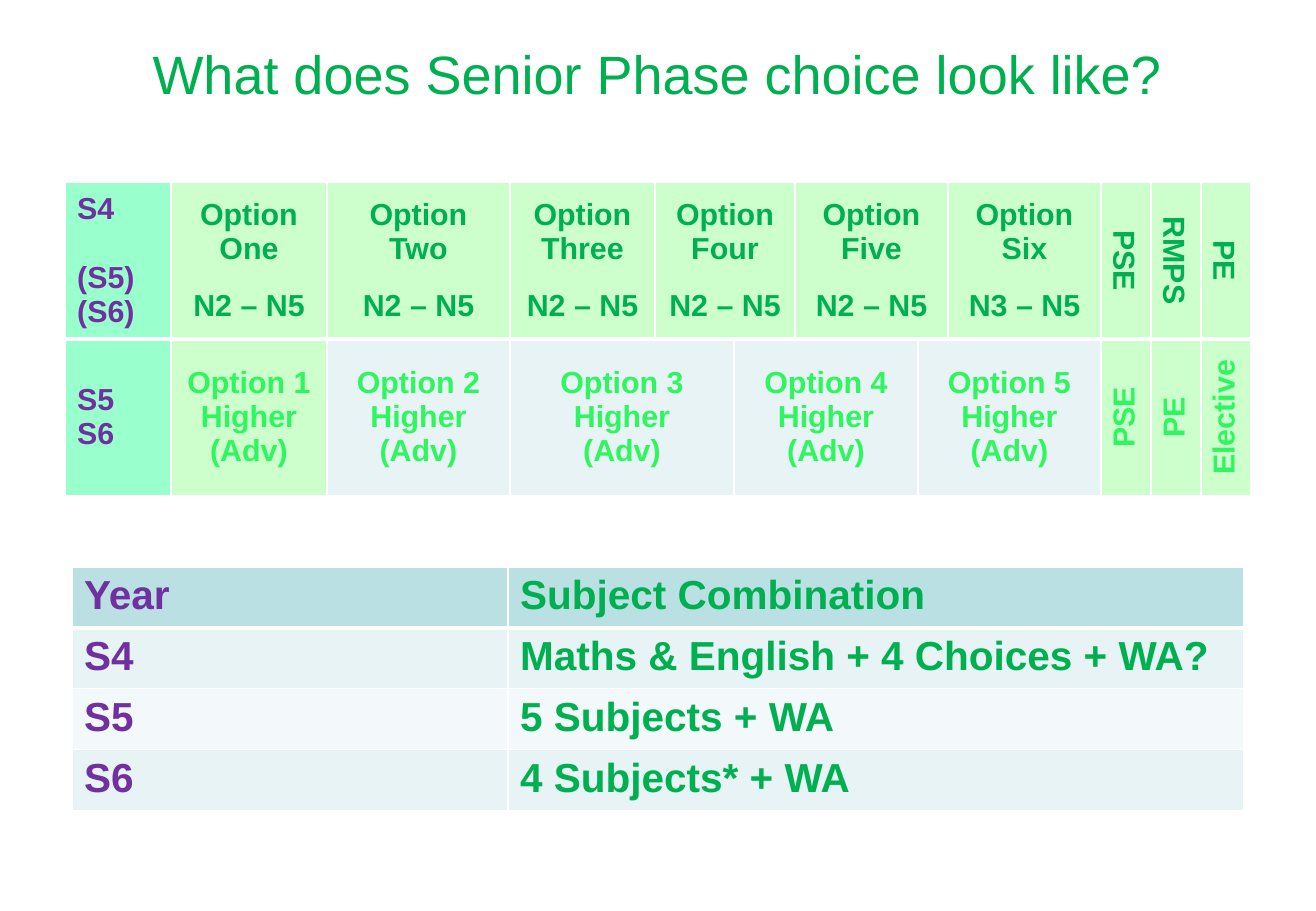
from lxml import etree
from pptx import Presentation, util as u
from pptx.dml.color import RGBColor
from pptx.enum import text
from pptx.oxml import ns

PX = 914400 / 121.5
COLOURS = {
    "white": "FFFFFF", "purple": "7030A0", "green": "00B050", "bright": "2EF65E",
    "mint": "99FFCC", "lime": "CCFFCC", "header": "BBE0E3", "band": "E7F3F4", "pale": "F3F9FA",
}
LEFT, CENTRE = text.PP_ALIGN.LEFT, text.PP_ALIGN.CENTER


def add_grid(left, top, widths, height, rows):
    """Add a plain table with equal rows; lengths in px."""
    frame = page.shapes.add_table(
        rows, len(widths), *(u.Emu(round(n * PX)) for n in (left, top, sum(widths), rows * height)))
    table = frame.table
    table.first_row = table.horz_banding = False
    for column, width in zip(table.columns, widths):
        column.width = u.Emu(round(width * PX))
    for row in table.rows:
        row.height = u.Emu(round(height * PX))
    return table


def fill_cell(table, row, column, lines, fill, colour, size, align=LEFT,
              anchor=text.MSO_ANCHOR.MIDDLE, vert=None, gap=None):
    """Write and format a cell; gap is (line index, points of space before it)."""
    cell = table.cell(row, column)
    props = cell._tc.get_or_add_tcPr()
    if vert:
        props.set("vert", vert)
    for side in "LRTB":
        heavy = (row, side) in ((0, "B"), (1, "T"))
        line = etree.SubElement(props, ns.qn(f"a:ln{side}"), w=str(u.Pt(3 if heavy else 1)))
        solid = etree.SubElement(line, ns.qn("a:solidFill"))
        etree.SubElement(solid, ns.qn("a:srgbClr"), val=COLOURS["white"])
    cell.fill.solid()
    cell.fill.fore_color.rgb = RGBColor.from_string(COLOURS[fill])
    cell.vertical_anchor = anchor
    for index, words in enumerate(lines):
        box = cell.text_frame
        para = box.paragraphs[0] if index == 0 else box.add_paragraph()
        para.alignment = align
        if gap and gap[0] == index:
            para.space_before = u.Pt(gap[1])
        span = para.add_run()
        span.text = words
        for name, value in {"name": "Arial", "size": u.Pt(size), "bold": True}.items():
            setattr(span.font, name, value)
        span.font.color.rgb = RGBColor.from_string(COLOURS[colour])


deck = Presentation()
deck.slide_width, deck.slide_height = u.Inches(10.83), u.Inches(7.5)
page = deck.slides.add_slide(deck.slide_layouts[5])

title = page.shapes.title
for name, length in {"left": 134, "top": 34, "width": 1047, "height": 78}.items():
    setattr(title, name, u.Emu(round(length * PX)))
title.text_frame.text = "What does Senior Phase choice look like?"
title.text_frame.auto_size = text.MSO_AUTO_SIZE.NONE
title.text_frame.vertical_anchor = text.MSO_ANCHOR.MIDDLE
heading = title.text_frame.paragraphs[0]
heading.alignment = CENTRE
for name, value in {"name": "Arial", "size": u.Pt(32)}.items():
    setattr(heading.runs[0].font, name, value)
heading.runs[0].font.color.rgb = RGBColor.from_string(COLOURS["green"])

# Option columns
options = add_grid(65, 182, [106, 156, 183, 145, 79, 61, 123, 30, 153, 50, 50, 50], 157, 2)
for row, first, last in ((0, 4, 5), (0, 6, 7), (1, 3, 4), (1, 5, 6), (1, 7, 8)):
    options.cell(row, first).merge(options.cell(row, last))

fill_cell(options, 0, 0, ["S4", "(S5)", "(S6)"], "mint", "purple", 18, gap=(1, 20.5))
fill_cell(options, 1, 0, ["S5", "S6"], "mint", "purple", 18)
for column, number in zip((1, 2, 3, 4, 6, 8), ("One", "Two", "Three", "Four", "Five", "Six")):
    level = "N3 – N5" if number == "Six" else "N2 – N5"
    fill_cell(options, 0, column, ["Option", number, level], "lime", "green", 18, CENTRE, gap=(2, 13.5))
for number, column in enumerate((1, 2, 3, 5, 7), 1):
    fill_cell(options, 1, column, [f"Option {number}", "Higher", "(Adv)"],
              "lime" if number == 1 else "band", "bright", 18, CENTRE)
for row, colour, vert, subjects in ((0, "green", "vert", ("PSE", "RMPS", "PE")),
                                    (1, "bright", "vert270", ("PSE", "PE", "Elective"))):
    for column, subject in enumerate(subjects, 9):
        fill_cell(options, row, column, [subject], "lime", colour, 18, CENTRE, vert=vert)

# Subject combinations by year
combinations = [
    ("Year", "Subject Combination", "header"),
    ("S4", "Maths & English + 4 Choices + WA?", "band"),
    ("S5", "5 Subjects + WA", "pale"),
    ("S6", "4 Subjects* + WA", "band"),
]
years = add_grid(72, 567, [436, 736], 61, len(combinations))
for row, (year, subjects, fill) in enumerate(combinations):
    for column, (words, colour) in enumerate(((year, "purple"), (subjects, "green"))):
        fill_cell(years, row, column, [words], fill, colour, 24, anchor=text.MSO_ANCHOR.TOP)

deck.save("out.pptx")
